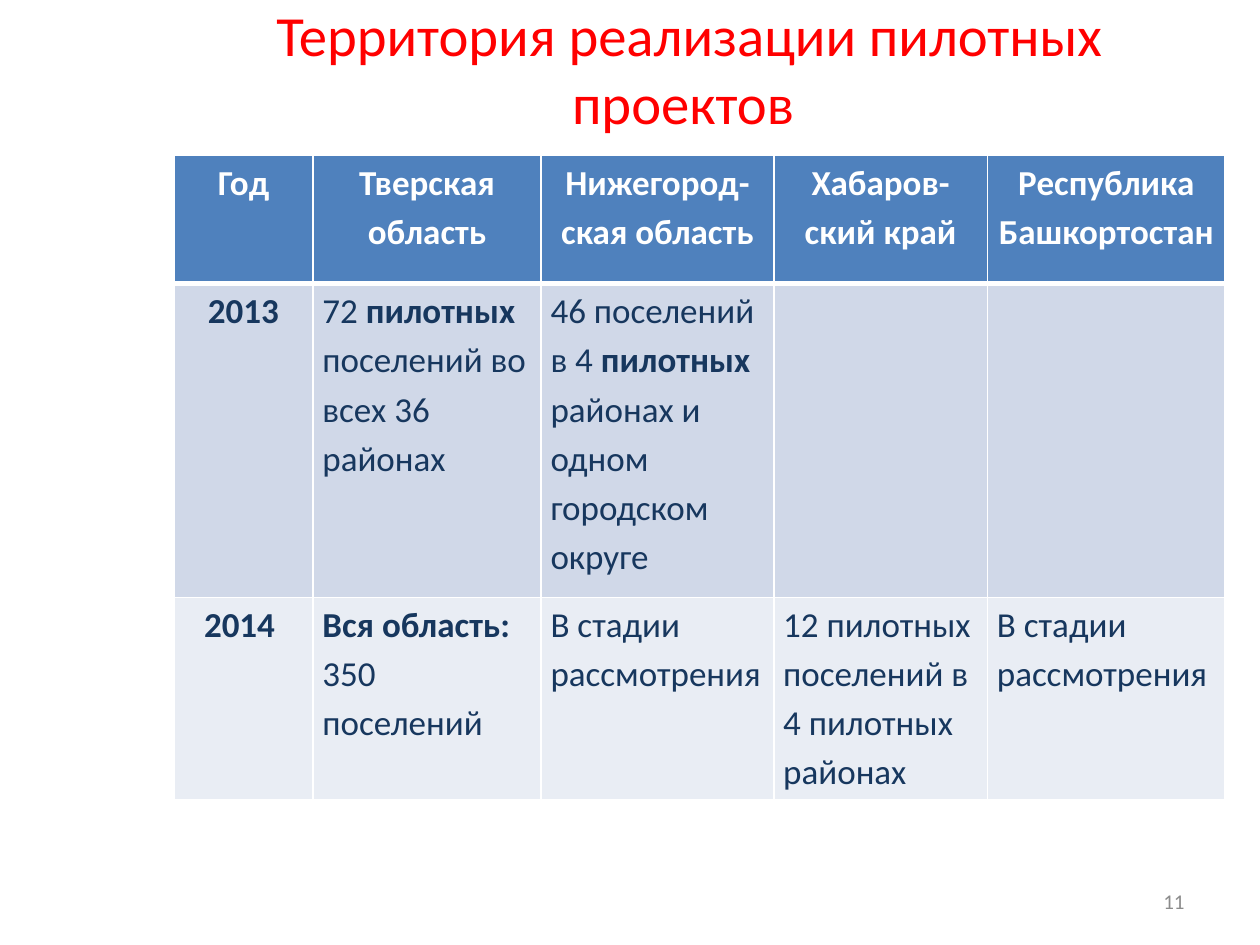
from lxml import etree
from pptx import Presentation
from pptx.dml.color import RGBColor
from pptx.enum.text import MSO_ANCHOR, PP_ALIGN
from pptx.oxml.ns import qn
from pptx.util import Cm, Pt

CENTER, LEFT, RIGHT = PP_ALIGN.CENTER, PP_ALIGN.LEFT, PP_ALIGN.RIGHT
MIDDLE = MSO_ANCHOR.MIDDLE

RED = RGBColor(0xFF, 0x00, 0x00)
WHITE = RGBColor(0xFF, 0xFF, 0xFF)
NAVY = RGBColor(0x17, 0x37, 0x5E)
GREY = RGBColor(0x8C, 0x8C, 0x8C)
HEADER_BLUE = RGBColor(0x4F, 0x81, 0xBD)
BAND_DARK = RGBColor(0xD0, 0xD8, 0xE8)
BAND_LIGHT = RGBColor(0xE9, 0xED, 0xF4)

COLUMN_WIDTHS = (2.8, 4.6, 4.69, 4.31, 4.79)
ROW_HEIGHTS = (2.59, 6.32, 4.09)
ROW_FILLS = (HEADER_BLUE, BAND_DARK, BAND_LIGHT)

# A cell is a list of paragraphs, a paragraph a list of (text, bold) runs.
REGIONS = ("Год", "Тверская область", "Нижегород-ская область",
           "Хабаров-ский край", "Республика Башкортостан")
PENDING = [[("В стадии рассмотрения", False)]]
ROWS = (
    [[[(region, True)]] for region in REGIONS],
    [
        [[("2013", True)]],
        [[("72 ", False), ("пилотных ", True),
          ("поселений во всех 36 районах", False)]],
        [[("46 поселений в 4 ", False), ("пилотных ", True),
          ("районах и одном городском округе", False)]],
        [],
        [],
    ],
    [
        [[("2014 ", True)]],
        [[("Вся область:", True)], [("350 поселений", False)]],
        PENDING,
        [[("12 пилотных поселений в 4 пилотных районах", False)]],
        PENDING,
    ],
)


class SlideBuilder:
    font = "Calibri"
    cell_format = {"margin_left": Cm(0.19), "margin_right": Cm(0.19),
                   "margin_top": 0, "margin_bottom": 0}

    def __init__(self, slide):
        self.slide = slide

    def add_text(self, frame, paragraphs, size, color, align, spacing=None):
        for index, runs in enumerate(paragraphs):
            paragraph = frame.add_paragraph() if index else frame.paragraphs[0]
            paragraph.alignment = align
            paragraph.line_spacing = spacing
            for text, bold in runs:
                run = paragraph.add_run()
                run.text = text
                run.font.color.rgb = color
                style = {"name": self.font, "size": Pt(size), "bold": bold}
                for name, value in style.items():
                    setattr(run.font, name, value)

    def label(self, text, box, size, color, align):
        frame = self.slide.shapes.add_textbox(*map(Cm, box)).text_frame
        frame.word_wrap = True
        frame.vertical_anchor = MIDDLE
        self.add_text(frame, [[(text, False)]], size, color, align)

    def borders(self, cell, widths):
        """Draw white cell borders; widths maps a side letter to points."""
        properties = cell._tc.get_or_add_tcPr()
        for side, width in widths.items():
            line = etree.SubElement(properties, qn(f"a:ln{side}"), w=str(Pt(width)))
            fill = etree.SubElement(line, qn("a:solidFill"))
            etree.SubElement(fill, qn("a:srgbClr"), val=str(WHITE))

    def table(self, left, top):
        size = (Cm(sum(COLUMN_WIDTHS)), Cm(sum(ROW_HEIGHTS)))
        table = self.slide.shapes.add_table(
            len(ROWS), len(REGIONS), Cm(left), Cm(top), *size).table
        for column, width in zip(table.columns, COLUMN_WIDTHS):
            column.width = Cm(width)
        for r, (row, height) in enumerate(zip(table.rows, ROW_HEIGHTS)):
            row.height = Cm(height)
            for c, cell in enumerate(row.cells):
                for name, value in self.cell_format.items():
                    setattr(cell, name, value)
                self.borders(cell, {"L": 1, "R": 1, "T": 3 if r == 1 else 1,
                                    "B": 3 if r == 0 else 1})
                cell.fill.solid()
                cell.fill.fore_color.rgb = ROW_FILLS[r]
                self.add_text(cell.text_frame, ROWS[r][c], 20,
                              NAVY if r else WHITE,
                              LEFT if r and c else CENTER, 1.15)


def main():
    presentation = Presentation()
    presentation.slide_width, presentation.slide_height = Cm(25.4), Cm(19.05)
    blank = presentation.slide_layouts[6]
    builder = SlideBuilder(presentation.slides.add_slide(blank))
    builder.label("Территория реализации пилотных проектов ",
                  (3.3, 0, 21.2, 2.72), 32.4, RED, CENTER)
    builder.table(3.51, 3.13)
    builder.label("11", (18.2, 17.66, 5.93, 1.01), 12, GREY, RIGHT)
    presentation.save("out.pptx")


if __name__ == "__main__":
    main()
